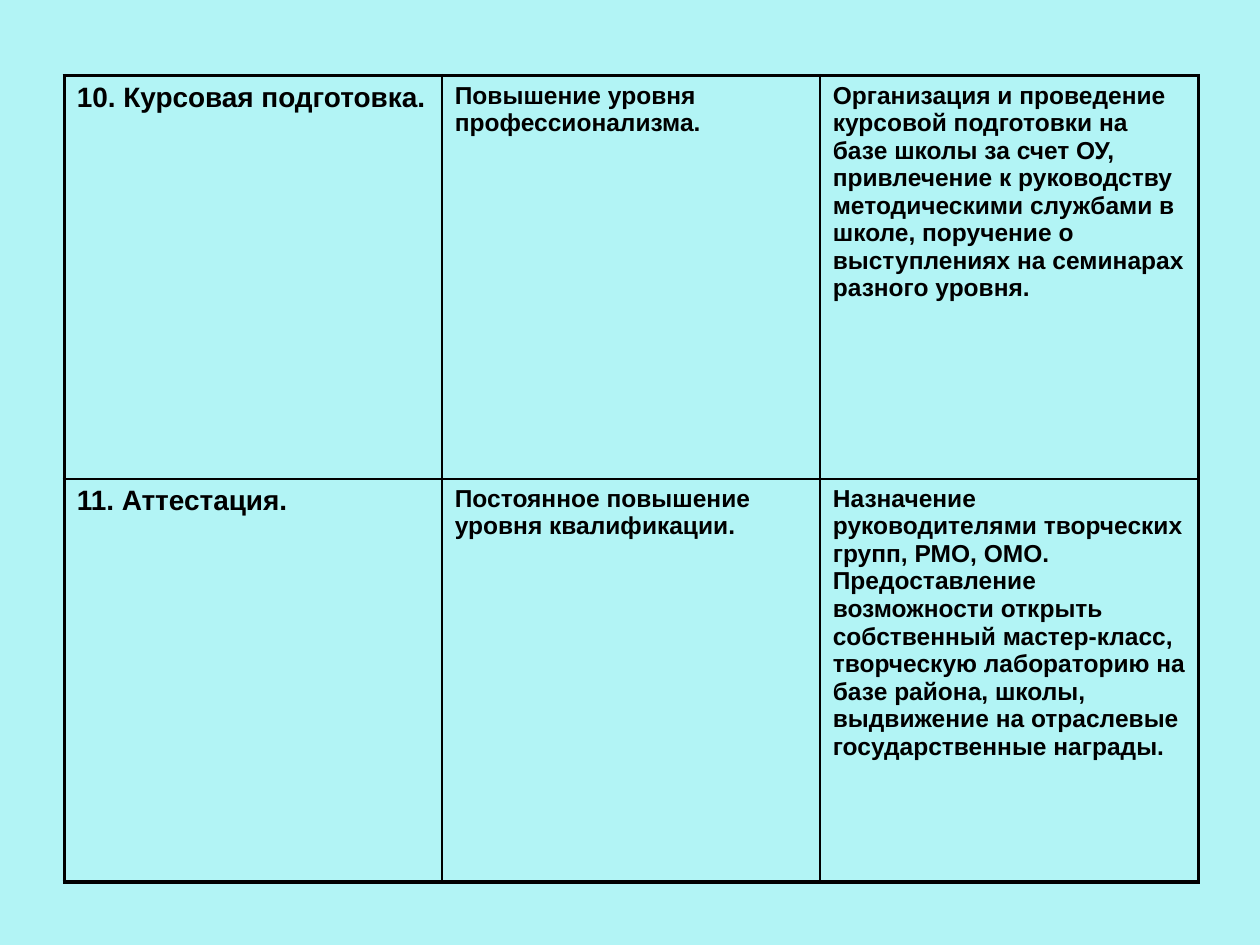
from dataclasses import dataclass

from lxml.etree import SubElement
from pptx import Presentation
from pptx.dml.color import RGBColor
from pptx.oxml.ns import qn
from pptx.table import Table, _Cell as Cell
from pptx.util import Inches, Pt

BACKGROUND = "B2F4F5"
INK = "000000"
FONT = "Arial"
OUTER_LINE, INNER_LINE = 2.25, 1
COLUMN_WIDTH, ROW_HEIGHT = 3, 3.2
HEADING_SIZE, BODY_SIZE = 16, 14


@dataclass
class Activity:
    name: str
    goal: str
    incentive: str


ACTIVITIES = [
    Activity(
        "10. Курсовая подготовка.",
        "Повышение уровня профессионализма.",
        "Организация и проведение курсовой подготовки на базе школы за счет ОУ, "
        "привлечение к руководству методическими службами в школе, "
        "поручение о выступлениях на семинарах разного уровня.",
    ),
    Activity(
        "11. Аттестация.",
        "Постоянное повышение уровня квалификации.",
        "Назначение руководителями творческих групп, РМО, ОМО. "
        "Предоставление возможности открыть собственный мастер-класс, "
        "творческую лабораторию на базе района, школы, "
        "выдвижение на отраслевые государственные награды.",
    ),
]


def color(hex_value: str) -> RGBColor:
    return RGBColor.from_string(hex_value)


def draw_borders(cell: Cell, outer_sides: dict[str, bool]) -> None:
    """Give each side a thick line on the table's edge, a thin one inside."""
    properties = cell._tc.get_or_add_tcPr()
    for side, is_outer in outer_sides.items():
        width = Pt(OUTER_LINE if is_outer else INNER_LINE)
        line = SubElement(properties, qn(f"a:ln{side}"), w=str(int(width)))
        fill = SubElement(line, qn("a:solidFill"))
        SubElement(fill, qn("a:srgbClr"), val=INK)


def write_text(cell: Cell, text: str, size: float) -> None:
    paragraph = cell.text_frame.paragraphs[0]
    # Space before is a share of the line height
    space = SubElement(paragraph._p.get_or_add_pPr(), qn("a:spcBef"))
    SubElement(space, qn("a:spcPct"), val="20000")
    run = paragraph.add_run()
    run.text = text
    run.font.name = FONT
    run.font.size = Pt(size)
    run.font.bold = True
    run.font.color.rgb = color(INK)


def fill_table(table: Table, activities: list[Activity]) -> None:
    last_row, last_column = len(table.rows) - 1, len(table.columns) - 1
    for row, activity in enumerate(activities):
        texts = (activity.name, activity.goal, activity.incentive)
        for column, text in enumerate(texts):
            cell = table.cell(row, column)
            write_text(cell, text, BODY_SIZE if column else HEADING_SIZE)
            draw_borders(cell, {
                "L": column == 0,
                "R": column == last_column,
                "T": row == 0,
                "B": row == last_row,
            })
            cell.fill.background()


def main() -> None:
    presentation = Presentation()
    presentation.slide_width = Inches(10)
    presentation.slide_height = Inches(7.5)
    slide = presentation.slides.add_slide(presentation.slide_layouts[6])

    # Background
    slide.background.fill.solid()
    slide.background.fill.fore_color.rgb = color(BACKGROUND)

    # Table of activities
    rows, columns = len(ACTIVITIES), 3
    table = slide.shapes.add_table(
        rows, columns, Inches(0.51), Inches(0.6),
        Inches(columns * COLUMN_WIDTH), Inches(rows * ROW_HEIGHT),
    ).table
    table.first_row = False
    table.horz_banding = False
    fill_table(table, ACTIVITIES)

    presentation.save("out.pptx")


if __name__ == "__main__":
    main()
